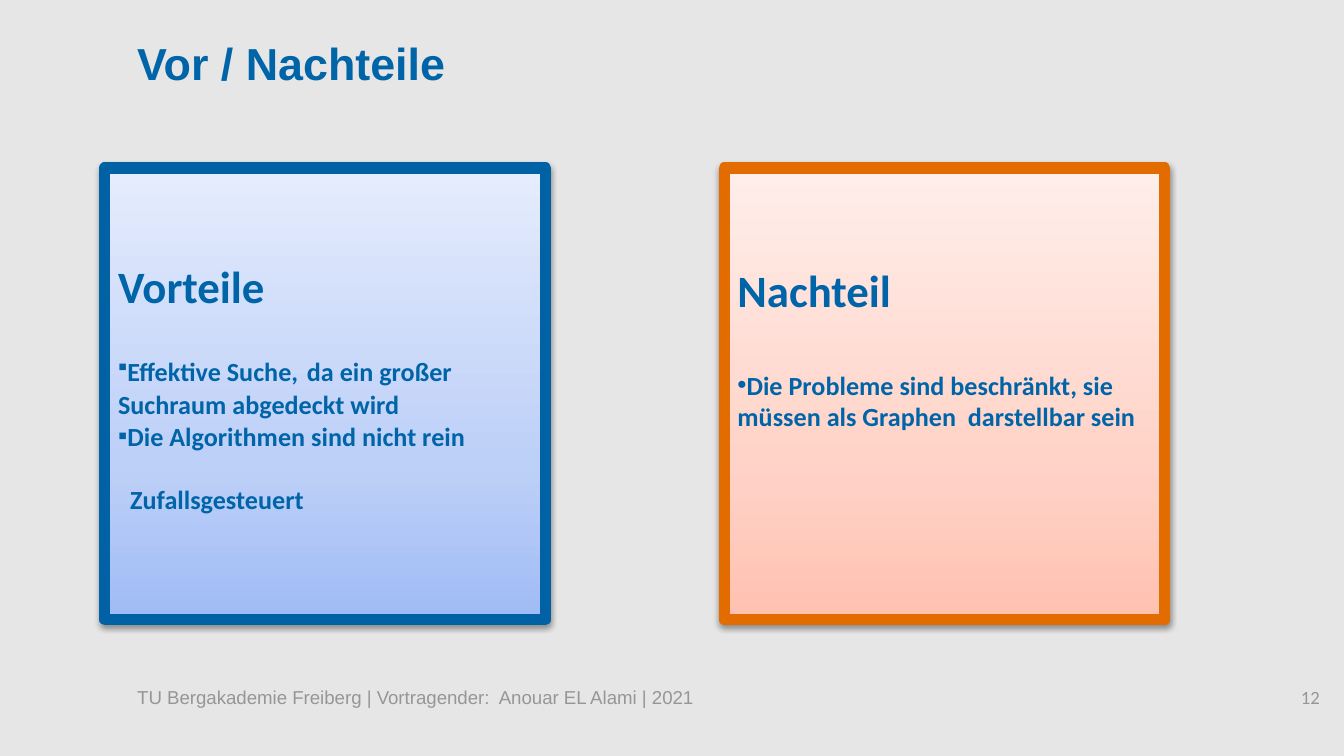
from dataclasses import dataclass

from lxml import etree
from pptx import Presentation
from pptx.dml.color import RGBColor
from pptx.enum.shapes import MSO_SHAPE
from pptx.enum.text import MSO_ANCHOR, MSO_AUTO_SIZE, PP_ALIGN
from pptx.oxml.ns import qn
from pptx.util import Pt

RECT = MSO_SHAPE.RECTANGLE
TOP, MIDDLE = MSO_ANCHOR.TOP, MSO_ANCHOR.MIDDLE
LEFT, RIGHT = PP_ALIGN.LEFT, PP_ALIGN.RIGHT
NO_FIT = MSO_AUTO_SIZE.NONE
TITLE_ONLY = 5


@dataclass(frozen=True)
class Theme:
    background: str = "E6E6E6"
    text: str = "0064A8"
    muted: str = "969696"
    blue_line: str = "0062A4"
    blue_fill: tuple = ("A0BCF6", "BDD0F7", "E5ECFD")
    orange_line: str = "E26C00"
    orange_fill: tuple = ("FFC1B1", "FFD3C8", "FFEEEA")
    stops: tuple = (0, 35, 100)
    sans: str = "Arial"
    card_font: str = "Calibri"
    heading: int = 24
    wide_space: int = 20
    body: int = 14
    small: int = 10


def add_child(parent, tag, **attrs):
    return etree.SubElement(parent, qn(tag), {k: str(v) for k, v in attrs.items()})


class SlideBuilder:
    def __init__(self, slide, theme):
        self.s = slide
        self.theme = theme
        fill = slide.background.fill
        fill.solid()
        fill.fore_color.rgb = RGBColor.from_string(theme.background)

    def font(self, font, name, size, color, bold=False):
        font.name, font.size, font.bold = name, Pt(size), bold
        font.color.rgb = RGBColor.from_string(color)

    def frame(self, tf, anchor, inset=0, top=0):
        tf.word_wrap, tf.auto_size, tf.vertical_anchor = True, NO_FIT, anchor
        tf.margin_left = tf.margin_right = Pt(inset)
        tf.margin_top, tf.margin_bottom = Pt(top), 0

    def title(self, text, x, y, w, h):
        t = self.theme
        sp = self.s.shapes.title
        sp.left, sp.top, sp.width, sp.height = Pt(x), Pt(y), Pt(w), Pt(h)
        self.frame(sp.text_frame, MIDDLE)
        p = sp.text_frame.paragraphs[0]
        p.text, p.alignment = text, LEFT
        self.font(p.font, t.sans, t.heading, t.text, True)

    def label(self, text, x, y, w, h, name, align=LEFT):
        t = self.theme
        tf = self.s.shapes.add_textbox(Pt(x), Pt(y), Pt(w), Pt(h)).text_frame
        self.frame(tf, TOP)
        p = tf.paragraphs[0]
        p.text, p.alignment = text, align
        self.font(p.font, name, t.small, t.muted)

    def card(self, x, y, w, h, colors, line, text_top):
        """Add a framed gradient card and return its text frame."""
        sp = self.s.shapes.add_shape(RECT, Pt(x), Pt(y), Pt(w), Pt(h))
        sp.fill.gradient()
        sp.fill.gradient_angle = 90
        sp.line.color.rgb = RGBColor.from_string(line)
        sp.line.width = Pt(6)
        sp.shadow.inherit = False
        props = sp._element.spPr

        stop_list = props.find(qn("a:gradFill")).find(qn("a:gsLst"))
        for old in list(stop_list):
            stop_list.remove(old)
        for pos, color in zip(self.theme.stops, colors):
            stop = add_child(stop_list, "a:gs", pos=pos * 1000)
            add_child(stop, "a:srgbClr", val=color)

        shadow = add_child(props.find(qn("a:effectLst")), "a:outerShdw", blurRad=Pt(3.1),
                           dist=Pt(1.6), dir=90 * 60000, rotWithShape=0)
        add_child(add_child(shadow, "a:srgbClr", val="000000"), "a:alpha", val=38000)

        self.frame(sp.text_frame, TOP, inset=7.2, top=text_top)
        return sp.text_frame

    def heading(self, tf, text):
        t = self.theme
        p = tf.paragraphs[0]
        p.text, p.alignment = text, LEFT
        self.font(p.font, t.card_font, t.heading, t.text, True)

    def item(self, tf, parts, bullet=None, before=0, indent=0):
        """Add a line from text parts; a lone space becomes a wide space."""
        t = self.theme
        p = tf.add_paragraph()
        p.alignment, p.space_before = LEFT, Pt(before)
        props = p._p.get_or_add_pPr()
        props.set("marL", str(Pt(indent)))
        props.set("indent", "0")
        if bullet:
            add_child(props, "a:buFont", typeface=t.sans)
            add_child(props, "a:buChar", char=bullet)
        self.font(p.font, t.card_font, t.body, t.text, True)
        for part in parts:
            r = p.add_run()
            r.text = part
            if part == " ":
                r.font.size = Pt(t.wide_space)


def main():
    prs = Presentation()
    prs.slide_width, prs.slide_height = Pt(720), Pt(405)
    theme = Theme()
    b = SlideBuilder(prs.slides.add_slide(prs.slide_layouts[TITLE_ONLY]), theme)

    margin, content_w, footer_y = 73.5, 575, 367.2
    b.title("Vor / Nachteile", margin, 16.5, content_w, 34)
    b.label("TU Bergakademie Freiberg | Vortragender:  Anouar EL Alami | 2021",
            margin, footer_y, content_w, 28, theme.sans)
    b.label("12", 649.5, footer_y, 57.5, 28, theme.card_font, RIGHT)

    card_y, card_w, card_h = 90, 236, 242
    tf = b.card(56.2, card_y, card_w, card_h, theme.blue_fill, theme.blue_line, 48.5)
    b.heading(tf, "Vorteile")
    b.item(tf, ["Effektive Suche,", " ", "da ein großer Suchraum abgedeckt wird"], "▪", before=17)
    b.item(tf, ["Die Algorithmen sind nicht rein"], "▪")
    b.item(tf, ["Zufallsgesteuert"], before=17, indent=6.4)

    tf = b.card(388, card_y, card_w, card_h, theme.orange_fill, theme.orange_line, 51)
    b.heading(tf, "Nachteil")
    b.item(tf, ["Die Probleme sind beschränkt, sie müssen als Graphen  darstellbar sein"],
           "•", before=28)

    prs.save("out.pptx")


if __name__ == "__main__":
    main()
